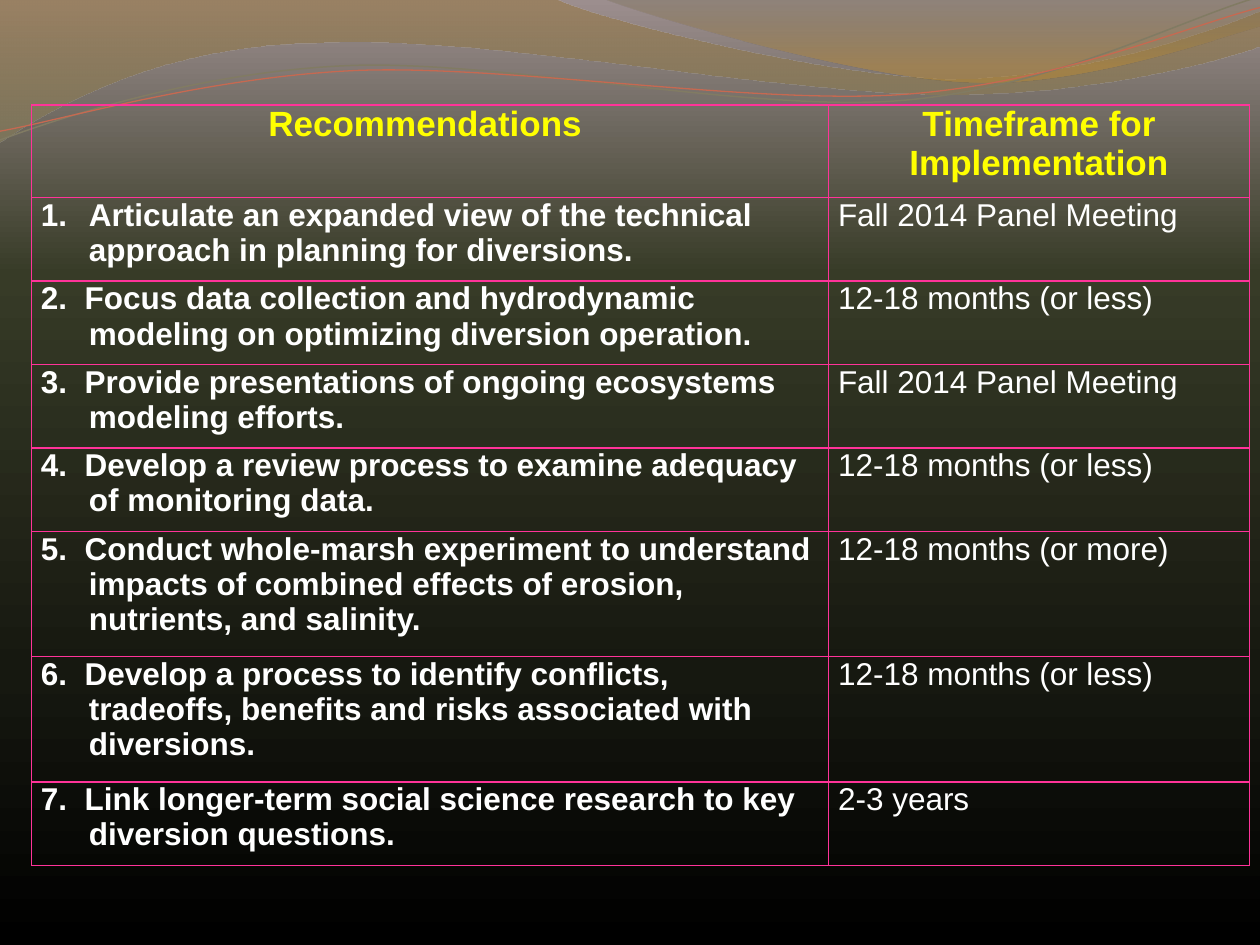
from lxml.etree import SubElement
from pptx import Presentation
from pptx.dml.color import RGBColor
from pptx.enum.text import PP_ALIGN
from pptx.oxml.ns import qn
from pptx.util import Pt

ROW, TALL_ROW = 47.7, 71.6
MEETING, SHORTER, LONGER = "Fall 2014 Panel Meeting", "12-18 months (or less)", "12-18 months (or more)"
HEADERS = ["Recommendations ", "Timeframe for Implementation"]
RECOMMENDATIONS = [
    ("Articulate an expanded view of the technical approach in planning for diversions.", MEETING, ROW),
    ("2.  Focus data collection and hydrodynamic modeling on optimizing diversion operation.", SHORTER, ROW),
    ("3.  Provide presentations of ongoing ecosystems modeling efforts.", MEETING, ROW),
    ("4.  Develop a review process to examine adequacy of monitoring data.", SHORTER, ROW),
    ("5.  Conduct whole-marsh experiment to understand impacts of combined effects of erosion, "
     "nutrients, and salinity.", LONGER, TALL_ROW),
    ("6.  Develop a process to identify conflicts, tradeoffs, benefits and risks associated with diversions.",
     SHORTER, TALL_ROW),
    ("7.  Link longer-term social science research to key diversion questions.", "2-3 years", ROW),
]

# Each outline is a start point, then segments: one point is a line, three points a Bézier curve.
LEFT_WAVE = [
    (0, -0.7), [(317, -0.7)],
    [(343, 12), (478, 45), (546, 45)], [(614, 45), (690, 19), (720, 6.5)],
    [(720.7, 26)], [(708, 32), (626, 55), (537, 54)],
    [(447, 54), (275, 20), (185, 24.5)], [(93, 25), (33, 60), (-0.7, 81.4)],
]
RIGHT_WAVE = [
    (345, -0.7), [(366, 8), (491, 45), (554, 47)],
    [(616, 50), (692, 23), (720, 15)], [(720, 0)],
]
GREY_CURVE = [
    (0, 80), [(35, 67), (114, 41), (199, 37.5)],
    [(284, 34), (427, 64), (513, 57.6)], [(600, 51), (675, 11), (718.5, -1.5)],
]
RED_CURVE = [
    (0, 75), [(34, 69), (118, 44), (204, 40.3)],
    [(290, 37), (430, 60), (516, 54)], [(602, 48), (678, 15), (720, 4.3)],
]


def rgb(color):
    return RGBColor.from_string(color)


def bend(sp, segments):
    """Turn the straight segments of a freeform into Bézier curves where they have control points."""
    lines = list(sp._element.iter(qn("a:lnTo")))
    for line, segment in zip(lines, segments):
        if len(segment) == 1:
            continue
        curve = line.makeelement(qn("a:cubicBezTo"))
        for x, y in segment:
            SubElement(curve, qn("a:pt"), x=str(Pt(x) - sp.left), y=str(Pt(y) - sp.top))
        line.getparent().replace(line, curve)


def fill_gradient(fill, element, stops):
    """Apply a top-to-bottom gradient; stops are (position %, color, opacity %)."""
    fill.gradient()
    fill.gradient_angle = 270
    stop_list = element.find(".//" + qn("a:gsLst"))
    for old in list(stop_list):
        stop_list.remove(old)
    for position, color, opacity in stops:
        stop = SubElement(stop_list, qn("a:gs"), pos=str(position * 1000))
        clr = SubElement(stop, qn("a:srgbClr"), val=color)
        if opacity < 100:
            SubElement(clr, qn("a:alpha"), val=str(opacity * 1000))


class SlideBuilder:
    font = "Arial"
    header_color, text_color, border_color = "FFFF00", "FFFFFF", "FF3399"
    header_size, text_size = 20, 18
    text_indent = 27.4

    def __init__(self, prs):
        self.s = prs.slides.add_slide(prs.slide_layouts[6])

    def background(self, stops):
        fill_gradient(self.s.background.fill, self.s.background._cSld, stops)

    def freeform(self, outline, close):
        start, *segments = outline
        builder = self.s.shapes.build_freeform(Pt(start[0]), Pt(start[1]))
        builder.add_line_segments([(Pt(x), Pt(y)) for *_, (x, y) in segments], close=close)
        sp = builder.convert_to_shape()
        bend(sp, segments)
        sp.shadow.inherit = False
        return sp

    def wave(self, outline, stops):
        sp = self.freeform(outline, close=True)
        fill_gradient(sp.fill, sp._element, stops)
        sp.line.fill.background()

    def curve(self, outline, color, width):
        sp = self.freeform(outline, close=False)
        sp.fill.background()
        sp.line.color.rgb = rgb(color)
        sp.line.width = Pt(width)

    def border(self, cell):
        tc_pr = cell._tc.get_or_add_tcPr()
        for i, side in enumerate(("a:lnL", "a:lnR", "a:lnT", "a:lnB")):
            ln = tc_pr.makeelement(qn(side), w=str(Pt(1)))
            SubElement(SubElement(ln, qn("a:solidFill")), qn("a:srgbClr"), val=self.border_color)
            tc_pr.insert(i, ln)

    def hang(self, p, first_line, numbered):
        """Give the paragraph a hanging indent, and an automatic number if wanted."""
        p_pr = p._p.get_or_add_pPr()
        p_pr.set("marL", str(Pt(self.text_indent)))
        p_pr.set("indent", str(Pt(first_line)))
        if numbered:
            SubElement(p_pr, qn("a:buFont"), typeface=self.font)
            SubElement(p_pr, qn("a:buAutoNum"), type="arabicPeriod")

    def cell(self, cell, text, size, color, bold):
        cell.fill.background()
        cell.margin_left = cell.margin_right = Pt(5.4)
        cell.margin_top = cell.margin_bottom = 0
        self.border(cell)
        p = cell.text_frame.paragraphs[0]
        p.text = text
        p.font.name, p.font.size, p.font.bold = self.font, Pt(size), bold
        p.font.color.rgb = rgb(color)
        return p

    def table(self, left, top, widths, header_height, headers, rows):
        heights = [header_height] + [height for *_, height in rows]
        table = self.s.shapes.add_table(len(heights), len(widths), Pt(left), Pt(top),
                                        Pt(sum(widths)), Pt(sum(heights))).table
        table.first_row = table.horz_banding = False
        for column, width in zip(table.columns, widths):
            column.width = Pt(width)
        for row, height in zip(table.rows, heights):
            row.height = Pt(height)
        for col, text in enumerate(headers):
            p = self.cell(table.cell(0, col), text, self.header_size, self.header_color, True)
            p.alignment = PP_ALIGN.CENTER
        for i, (recommendation, timeframe, _) in enumerate(rows, 1):
            p = self.cell(table.cell(i, 0), recommendation, self.text_size, self.text_color, True)
            numbered = i == 1
            self.hang(p, -self.text_indent if numbered else -36, numbered)
            self.cell(table.cell(i, 1), timeframe, self.text_size, self.text_color, False)


def main():
    prs = Presentation()
    prs.slide_width, prs.slide_height = Pt(720), Pt(540)
    slide = SlideBuilder(prs)
    slide.background([(0, "9C8E8E", 100), (29, "373B27", 100), (71, "161810", 100), (100, "000000", 100)])
    slide.wave(LEFT_WAVE, [(0, "967231", 45), (100, "8D835D", 55)])
    slide.wave(RIGHT_WAVE, [(0, "70694F", 30), (80, "BD8B30", 45)])
    slide.curve(GREY_CURVE, "817B63", 0.85)
    slide.curve(RED_CURVE, "C66951", 0.75)
    slide.table(18, 60, [455.5, 240.5], 53, HEADERS, RECOMMENDATIONS)
    prs.save("out.pptx")


if __name__ == "__main__":
    main()
